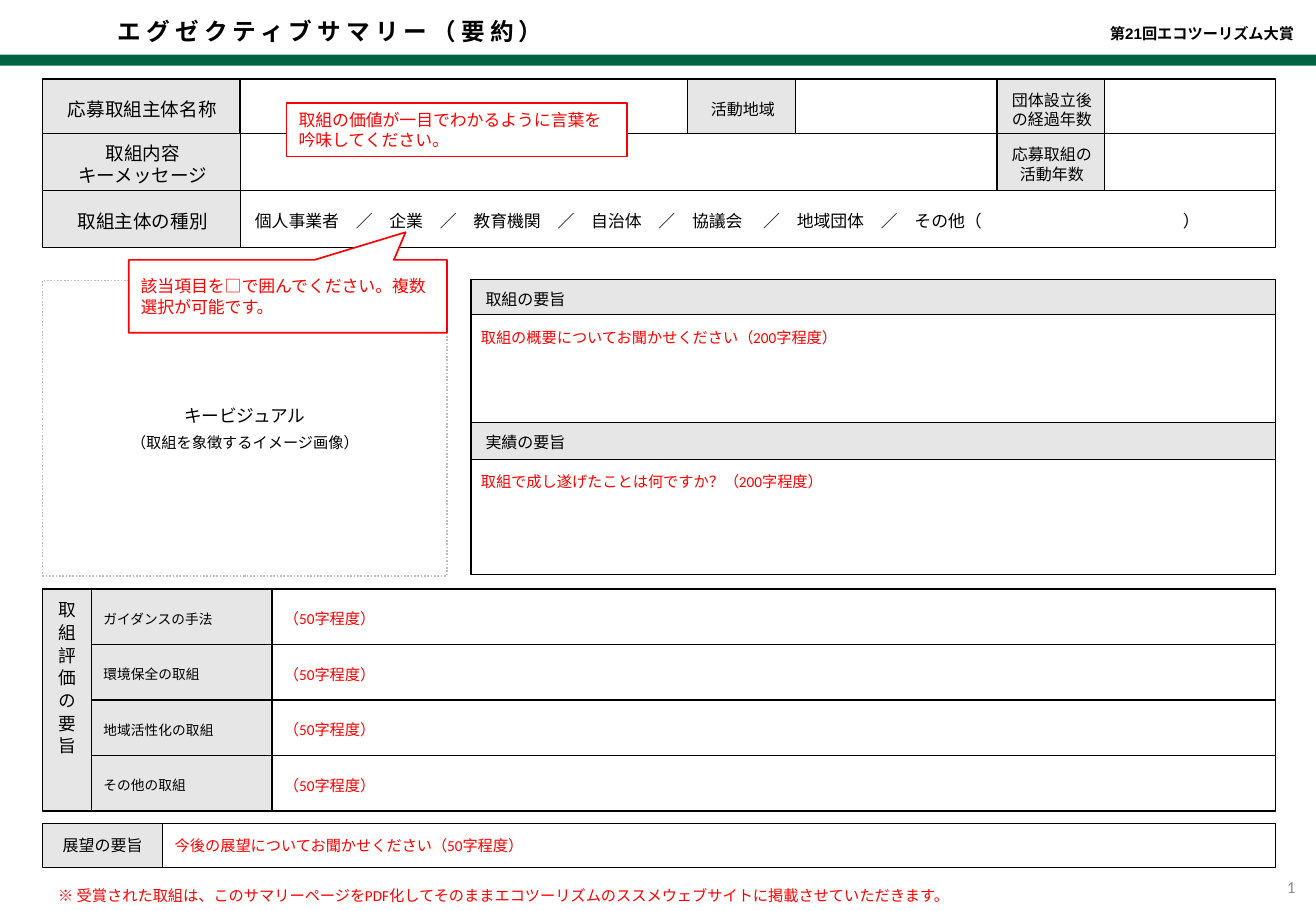
import pptx
import pptx.dml.color
import pptx.enum.dml
import pptx.enum.shapes
import pptx.enum.text
import pptx.oxml
import pptx.oxml.ns
import pptx.util

Pt = pptx.util.Pt
SHAPE = pptx.enum.shapes.MSO_SHAPE
ANCHOR = pptx.enum.text.MSO_ANCHOR
ALIGN = pptx.enum.text.PP_ALIGN
RGBColor = pptx.dml.color.RGBColor

GREEN = RGBColor(0x00, 0x64, 0x42)
BLACK = RGBColor(0x00, 0x00, 0x00)
WHITE = RGBColor(0xFF, 0xFF, 0xFF)
LABEL = RGBColor(0xE7, 0xE6, 0xE6)
DOTS = RGBColor(0xBF, 0xBF, 0xBF)
NUMBER = RGBColor(0x8C, 0x8C, 0x8C)
RED = RGBColor(0xFF, 0x00, 0x00)

INSETS = (7.2, 5.8, 7.2, 3.6)
LEFT, RIGHT = 25.2, 756


def write(sp, text, size, font="Arial", color=BLACK, align=ALIGN.LEFT,
          anchor=ANCHOR.MIDDLE, insets=INSETS, spacing=None, tab=None):
    """Fill a shape with text; insets run left, top, right, bottom and tab is in points."""
    tf = sp.text_frame
    tf.word_wrap = True
    tf.vertical_anchor = anchor
    tf.margin_left, tf.margin_top, tf.margin_right, tf.margin_bottom = map(Pt, insets)
    tf.text = text
    for p in tf.paragraphs:
        p.alignment = align
        if spacing:
            p.line_spacing = spacing
        if tab:
            p._p.get_or_add_pPr().append(pptx.oxml.parse_xml(
                f'<a:tabLst {pptx.oxml.ns.nsdecls("a")}>'
                f'<a:tab pos="{Pt(tab)}" algn="l"/></a:tabLst>'))
        p.font.name = font
        p.font.size = Pt(size)
        p.font.color.rgb = color
    return tf


def box(x, y, w, h, fill=WHITE, line=BLACK, width=0.75, kind=SHAPE.RECTANGLE):
    sp = s.shapes.add_shape(kind, Pt(x), Pt(y), Pt(w), Pt(h))
    sp.shadow.inherit = False
    sp.fill.solid()
    sp.fill.fore_color.rgb = fill
    if line is None:
        sp.line.fill.background()
    else:
        sp.line.color.rgb = line
        sp.line.width = Pt(width)
    return sp


prs = pptx.Presentation()
prs.slide_width, prs.slide_height = Pt(780), Pt(540)
s = prs.slides.add_slide(prs.slide_layouts[6])

# Header and page number
box(0, 32.4, 780, 6.5, GREEN, None)
page = s.shapes.add_textbox(Pt(729.4), Pt(511.2), Pt(45.4), Pt(28.8))
write(page, "1", 10, "Calibri", NUMBER, ALIGN.RIGHT, insets=(7.2, 3.6, 7.2, 3.6))
award = s.shapes.add_textbox(Pt(615.6), Pt(10.8), Pt(158.4), Pt(19.4))
tf = write(award, "第21回エコツーリズム大賞", 9, align=ALIGN.RIGHT, anchor=ANCHOR.BOTTOM,
           insets=(7.2, 5.8, 7.2, 5.8), spacing=0.9)
tf.paragraphs[0].font.bold = True
title = s.shapes.add_textbox(Pt(64.1), Pt(11.5), Pt(326.2), Pt(19.4))
tf = write(title, "エグゼクティブサマリー（要約）", 14, anchor=ANCHOR.BOTTOM,
           insets=(5.8, 5.8, 7.2, 3.6), spacing=0.9)
tf.paragraphs[0].font.bold = True
tf.paragraphs[0].runs[0]._r.get_or_add_rPr().set("spc", "300")

# Key visual area
visual = box(LEFT, 166.3, 239.8, 175, line=DOTS, width=1)
visual.line.dash_style = pptx.enum.dml.MSO_LINE.ROUND_DOT
tf = write(visual, "キービジュアル\n（取組を象徴するイメージ画像）", 10.5, align=ALIGN.CENTER,
           insets=(7.2, 3.6, 7.2, 3.6))
heading, note = tf.paragraphs
heading.space_after = note.space_before = note.space_after = Pt(2.4)
note.font.size = Pt(9)

# Summary blocks: heading, prompt, top, heading height, body height
SUMMARY_X = 279.2
for heading, prompt, top, head_h, body_h in [
    ("取組の要旨", "取組の概要についてお聞かせください（200字程度）", 165.6, 20.9, 64.1),
    ("実績の要旨", "取組で成し遂げたことは何ですか？（200字程度）", 250.6, 21.6, 68.6),
]:
    body = box(SUMMARY_X, top + head_h, RIGHT - SUMMARY_X, body_h)
    write(body, prompt, 9, "Calibri", RED, anchor=ANCHOR.TOP,
          insets=(5.8, 5.8, 7.2, 3.6), spacing=Pt(13))
    head = box(SUMMARY_X, top, RIGHT - SUMMARY_X, head_h, LABEL)
    write(head, heading, 9.5, anchor=ANCHOR.TOP, insets=(8.6, 5.8, 7.2, 3.6))

# Evaluation rows
EVAL_TOP, EVAL_STEP = 349.2, 32.9
for i, topic in enumerate(["ガイダンスの手法", "環境保全の取組", "地域活性化の取組", "その他の取組"]):
    top = EVAL_TOP + i * EVAL_STEP
    write(box(54.2, top, 107, EVAL_STEP, LABEL), topic, 8.1, "Calibri")
    write(box(161.2, top, RIGHT - 161.2, EVAL_STEP), "（50字程度）", 9, "Calibri", RED)
evaluation = box(LEFT, EVAL_TOP, 29.2, 4 * EVAL_STEP, LABEL)
tf = write(evaluation, "取組評価の要旨", 10.5, "Calibri", insets=(7.2, 7.2, 7.2, 7.2))
tf.paragraphs[0].runs[0]._r.get_or_add_rPr().set("spc", "300")
tf._txBody.bodyPr.set("vert", "eaVert")

# Outlook row
write(box(LEFT, 488.2, 71.3, 25.9, LABEL), "展望の要旨", 9.5, align=ALIGN.CENTER,
      insets=(7.2, 0, 7.2, 0))
write(box(96.5, 488.2, RIGHT - 96.5, 25.9), "今後の展望についてお聞かせください（50字程度）",
      9, "Calibri", RED, insets=(7.2, 0, 7.2, 0))

# Applicant form: rows of (left, right, label, size); an empty label is an entry field
ROW_H = 33.8
FORM = [
    (46.8, [(LEFT, 142.2, "応募取組主体名称", 11), (142.2, 407.5, "", 0),
            (407.5, 471.6, "活動地域", 9.5), (471.6, 591, "", 0),
            (591, 654.5, "団体設立後の経過年数", 9.5), (654.5, RIGHT, "", 0)]),
    (79.2, [(LEFT, 142.5, "取組内容\nキーメッセージ", 11), (142.5, 591, "", 0),
            (591, 654.5, "応募取組の活動年数", 9.5), (654.5, RIGHT, "", 0)]),
    (113, [(LEFT, 142.5, "取組主体の種別", 11), (142.5, RIGHT, "", 0)]),
]
for top, cells in FORM:
    for left, right, label, size in cells:
        field = box(left, top, right - left, ROW_H, LABEL if label else WHITE)
        if label:
            write(field, label, size, align=ALIGN.CENTER, insets=(8.6, 5.8, 7.2, 3.6))
write(field, "個人事業者　／　企業　／　教育機関　／　自治体　／　協議会　 ／　地域団体　／　その他（\t）",
      10, insets=(8.6, 5, 7.2, 3.6), tab=550)

# Footnote and red guidance
write(box(27.4, 519.8, 594.7, 20.2, line=None),
      "※ 受賞された取組は、このサマリーページをPDF化してそのままエコツーリズムのススメウェブサイトに掲載させていただきます。",
      9, "Calibri", RED)
write(box(169.9, 61.2, 201.6, 31.7, line=RED, width=1),
      "取組の価値が一目でわかるように言葉を吟味してください。",
      10, "Calibri", RED, anchor=ANCHOR.TOP, insets=(7.2, 3.6, 7.2, 3.6))
callout = box(76.3, 154.1, 188.6, 43.2, line=RED, width=1, kind=SHAPE.RECTANGULAR_CALLOUT)
callout.adjustments[0], callout.adjustments[1] = 0.37, -0.88
write(callout, "該当項目を□で囲んでください。複数選択が可能です。",
      10, "Calibri", RED, insets=(7.2, 3.6, 7.2, 3.6))

prs.save("out.pptx")
